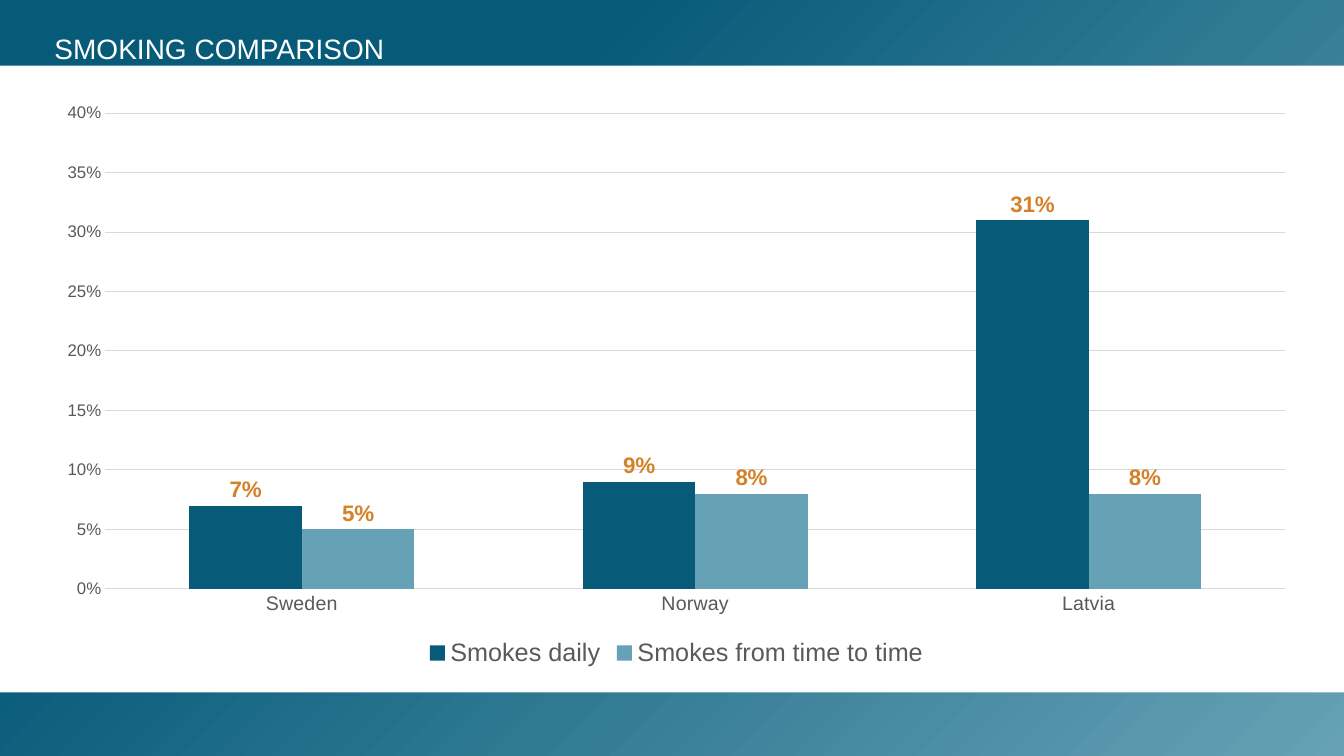
from pptx import Presentation
from pptx.chart.data import CategoryChartData as Data
from pptx.dml.color import RGBColor as Rgb
from pptx.enum.chart import XL_CHART_TYPE as Kind, XL_LABEL_POSITION as Spot
from pptx.enum.chart import XL_LEGEND_POSITION as Side, XL_TICK_MARK as Tick
from pptx.enum.shapes import MSO_SHAPE as Form
from pptx.enum.text import MSO_ANCHOR as Anchor
from pptx.util import Pt

WIDE, HIGH = 960.5, 540
FACE = "Arial"
HUES = {"deep": "075B79", "pale": "66A1B5", "white": "FFFFFF",
        "gray": "595959", "rule": "D9D9D9", "note": "D48127"}
LANDS = ["Sweden", "Norway", "Latvia"]
RATES = [("Smokes daily", [0.07, 0.09, 0.31], "deep"),
         ("Smokes from time to time", [0.05, 0.08, 0.08], "pale")]


def hue(name):
    """Return the named colour."""
    return Rgb.from_string(HUES[name])


def style(font, size, name, bold=False):
    """Set face, size, colour and weight of a font."""
    font.name, font.size, font.bold = FACE, Pt(size), bold
    font.color.rgb = hue(name)


def rule(line):
    """Draw a thin gray line."""
    line.color.rgb = hue("rule")
    line.width = Pt(0.75)


def block(slide, box):
    """Add a rectangle with no line or shadow."""
    shape = slide.shapes.add_shape(Form.RECTANGLE, *map(Pt, box))
    shape.shadow.inherit = False
    shape.line.fill.background()
    return shape


def frame(slide, box):
    """Fill the box with a gradient and lay a white band across it."""
    left, top, wide, high = box
    fill = block(slide, box).fill
    fill.gradient()
    fill.gradient_angle = 315
    for stop, name, place in zip(fill.gradient_stops, ("deep", "pale"), (0.3, 1)):
        stop.color.rgb = hue(name)
        stop.position = place
    band = block(slide, (left, top + 46.8, wide, high - 92.2))
    band.fill.solid()
    band.fill.fore_color.rgb = hue("white")


def title(slide, box, words):
    """Write the slide title at the foot of the box."""
    text = slide.shapes.add_textbox(*map(Pt, box)).text_frame
    text.word_wrap = True
    text.vertical_anchor = Anchor.BOTTOM
    text.margin_left = text.margin_right = Pt(9.4)
    text.margin_top = text.margin_bottom = Pt(5)
    para = text.paragraphs[0]
    para.line_spacing = 0.8
    run = para.add_run()
    run.text = words
    style(run.font, 20, "white")


def axes(chart):
    """Format both axes and the grid."""
    for axis, size in ((chart.category_axis, 14), (chart.value_axis, 12)):
        axis.major_tick_mark = axis.minor_tick_mark = Tick.NONE
        style(axis.tick_labels.font, size, "gray")
    rule(chart.category_axis.format.line)
    scale = chart.value_axis
    scale.minimum_scale, scale.maximum_scale, scale.major_unit = 0, 0.4, 0.05
    scale.format.line.fill.background()
    rule(scale.major_gridlines.format.line)
    scale.tick_labels.number_format = "0%"
    scale.tick_labels.number_format_is_linked = False


def bars(slide, box):
    """Add the clustered columns with labels and legend."""
    data = Data(number_format="0%")
    data.categories = LANDS
    for name, rates, _ in RATES:
        data.add_series(name, rates)
    chart = slide.shapes.add_chart(Kind.COLUMN_CLUSTERED, *map(Pt, box), data).chart
    chart.has_title = False
    chart.font.name, chart.font.size = FACE, Pt(10)
    axes(chart)
    plot = chart.plots[0]
    plot.gap_width, plot.overlap = 150, 0
    plot.vary_by_categories = False
    for row, (_, _, name) in zip(plot.series, RATES):
        row.invert_if_negative = False
        row.format.fill.solid()
        row.format.fill.fore_color.rgb = hue(name)
        label = row.data_labels
        label.show_value = True
        label.position = Spot.OUTSIDE_END
        label.number_format = "0%"
        label.number_format_is_linked = False
        style(label.font, 16, "note", True)
    chart.has_legend = True
    chart.legend.position = Side.BOTTOM
    chart.legend.include_in_layout = False
    style(chart.legend.font, 18, "gray")


def main():
    """Build and save the slide."""
    deck = Presentation()
    deck.slide_width, deck.slide_height = Pt(WIDE), Pt(HIGH)
    slide = deck.slides.add_slide(deck.slide_layouts[6])
    frame(slide, (0, 0, WIDE, HIGH))
    title(slide, (29.5, 17.3, 906.5, 33.8), "SMOKING COMPARISON")
    bars(slide, (30.2, 66.2, 906.5, 414))
    deck.save("out.pptx")


if __name__ == "__main__":
    main()
